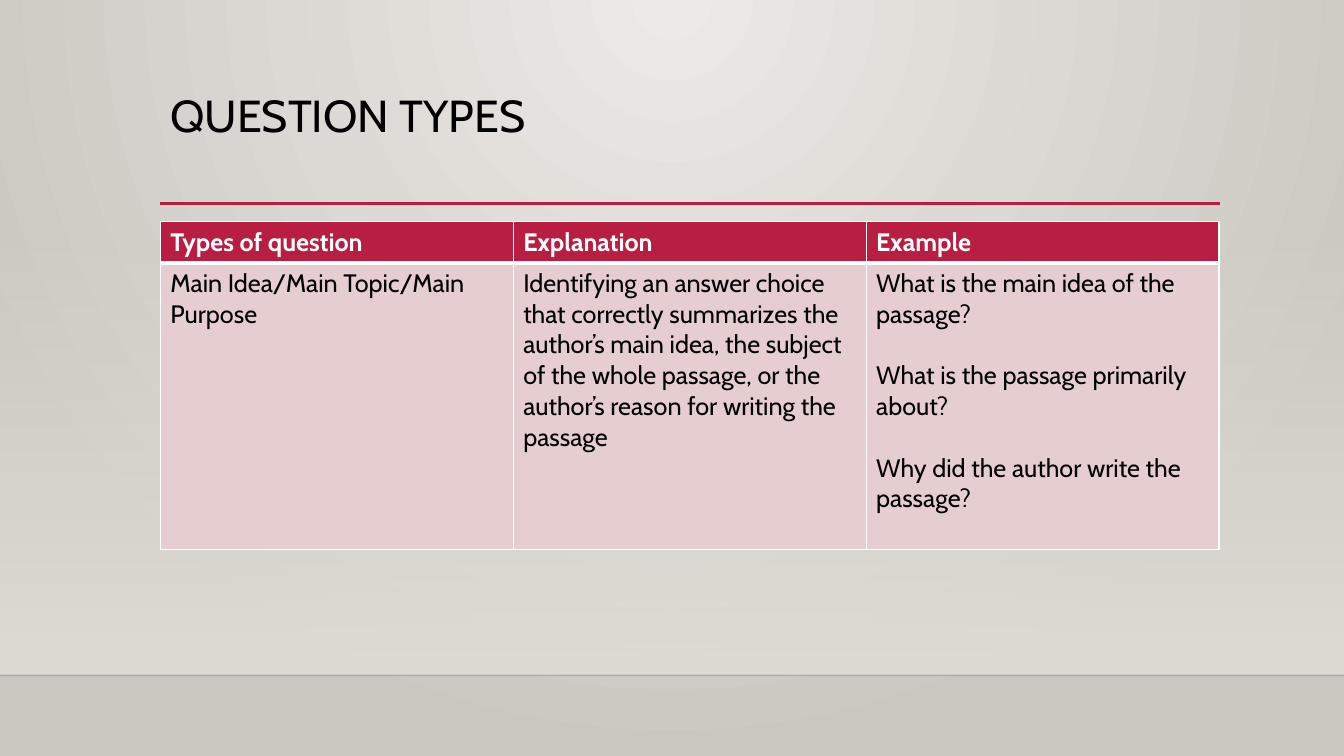
from dataclasses import dataclass

from lxml.etree import SubElement
from pptx import Presentation
from pptx.dml.color import RGBColor
from pptx.enum.shapes import MSO_CONNECTOR as Connector, MSO_SHAPE as Shape
from pptx.enum.text import MSO_ANCHOR as Anchor
from pptx.oxml.ns import qn
from pptx.util import Inches, Pt


@dataclass(frozen=True)
class Theme:
    font: str = "Cabin"
    accent: str = "B71E42"
    body_fill: str = "E6CDCF"
    black: str = "000000"
    white: str = "FFFFFF"
    glow: str = "ECEAE7"
    edge: str = "CAC7C1"
    wall: str = "DFDBD5"
    floor_line: str = "000001"
    title_size: int = 32
    table_size: int = 18
    answer_gap: int = 22


THEME = Theme()
SLIDE_WIDTH, SLIDE_HEIGHT = 13.33, 7.5
LEFT, CONTENT_WIDTH = 1.59, 10.5
FLOOR_TOP, WALL_TOP = 6.7, 2.21
ROW_HEIGHTS = (0.41, 2.84)

# Each cell is a list of paragraphs
QUESTION_ROWS = [
    [["Types of question"], ["Explanation"], ["Example"]],
    [
        ["Main Idea/Main Topic/Main Purpose"],
        ["Identifying an answer choice that correctly summarizes the author’s "
         "main idea, the subject of the whole passage, or the author’s reason "
         "for writing the passage"],
        ["What is the main idea of the passage?",
         "What is the passage primarily about?",
         "Why did the author write the passage?"],
    ],
]


def rgb(value):
    return RGBColor.from_string(value)


def set_font(paragraph, size, color, bold=False):
    formats = {"name": THEME.font, "size": Pt(size), "bold": bold}
    for name, value in formats.items():
        setattr(paragraph.font, name, value)
    paragraph.font.color.rgb = rgb(color)


def set_alpha(color_element, percent):
    SubElement(color_element, qn("a:alpha"), val=str(percent * 1000))


def set_gradient(fill, colors):
    fill.gradient()
    for stop, position, color in zip(fill.gradient_stops, (0, 1), colors):
        stop.position = position
        stop.color.rgb = rgb(color)


def paint_background(slide):
    set_gradient(slide.background.fill, (THEME.glow, THEME.edge))
    # Circular gradient centred on the top edge
    gradient = next(slide.element.iter(qn("a:gradFill")))
    gradient.remove(gradient.find(qn("a:lin")))
    circle = SubElement(gradient, qn("a:path"), path="circle")
    SubElement(circle, qn("a:fillToRect"), l="43000", t="0", r="43000", b="100000")


def add_wall(slide):
    wall = slide.shapes.add_shape(
        Shape.RECTANGLE, Inches(0), Inches(WALL_TOP),
        Inches(SLIDE_WIDTH), Inches(FLOOR_TOP - WALL_TOP))
    wall.shadow.inherit = False
    wall.line.fill.background()
    set_gradient(wall.fill, (THEME.wall, THEME.wall))
    wall.fill.gradient_angle = 270
    set_alpha(next(wall.element.iter(qn("a:srgbClr"))), 0)


def add_rule(slide, left, right, top, color, width, opacity=100):
    rule = slide.shapes.add_connector(
        Connector.STRAIGHT, Inches(left), Inches(top), Inches(right), Inches(top))
    rule.line.color.rgb = rgb(color)
    rule.line.width = Pt(width)
    if opacity < 100:
        set_alpha(next(rule.element.iter(qn("a:srgbClr"))), opacity)
    SubElement(rule.element.spPr, qn("a:effectLst"))


def add_title(slide, text):
    box = slide.shapes.add_textbox(
        Inches(LEFT), Inches(0.88), Inches(CONTENT_WIDTH), Inches(1.15))
    frame = box.text_frame
    frame.word_wrap = True
    frame.vertical_anchor = Anchor.TOP
    paragraph = frame.paragraphs[0]
    paragraph.text = text
    paragraph.line_spacing = 0.9
    set_font(paragraph, THEME.title_size, THEME.black)


def set_borders(cell, bottom_width):
    properties = cell._tc.get_or_add_tcPr()
    widths = {"a:lnL": 1, "a:lnR": 1, "a:lnT": 1, "a:lnB": bottom_width}
    for index, (tag, width) in enumerate(widths.items()):
        border = SubElement(properties, qn(tag), w=str(Pt(width)))
        fill = SubElement(border, qn("a:solidFill"))
        SubElement(fill, qn("a:srgbClr"), val=THEME.white)
        properties.insert(index, border)


def fill_cell(cell, lines, is_header):
    cell.fill.solid()
    cell.fill.fore_color.rgb = rgb(THEME.accent if is_header else THEME.body_fill)
    set_borders(cell, 3 if is_header else 1)
    cell.text = "\n".join(lines)
    for index, paragraph in enumerate(cell.text_frame.paragraphs):
        if index:
            paragraph.space_before = Pt(THEME.answer_gap)
        set_font(paragraph, THEME.table_size,
                 THEME.white if is_header else THEME.black, is_header)


def add_question_table(slide, rows):
    table = slide.shapes.add_table(
        len(rows), len(rows[0]), Inches(LEFT), Inches(2.2),
        Inches(CONTENT_WIDTH), Inches(sum(ROW_HEIGHTS))).table
    for row, height in zip(table.rows, ROW_HEIGHTS):
        row.height = Inches(height)
    for row_index, row in enumerate(rows):
        for column_index, lines in enumerate(row):
            # Header cells sit in the first row
            fill_cell(table.cell(row_index, column_index), lines, row_index == 0)


def main():
    presentation = Presentation()
    presentation.slide_width = Inches(SLIDE_WIDTH)
    presentation.slide_height = Inches(SLIDE_HEIGHT)
    slide = presentation.slides.add_slide(presentation.slide_layouts[6])

    # Backdrop
    paint_background(slide)
    add_wall(slide)
    add_rule(slide, 0, SLIDE_WIDTH, FLOOR_TOP, THEME.floor_line, 1, opacity=20)

    # Title and its rule
    add_rule(slide, LEFT, 12.1, 2.02, THEME.accent, 2.5)
    add_title(slide, "QUESTION TYPES")

    # Question types
    add_question_table(slide, QUESTION_ROWS)

    presentation.save("out.pptx")


if __name__ == "__main__":
    main()
